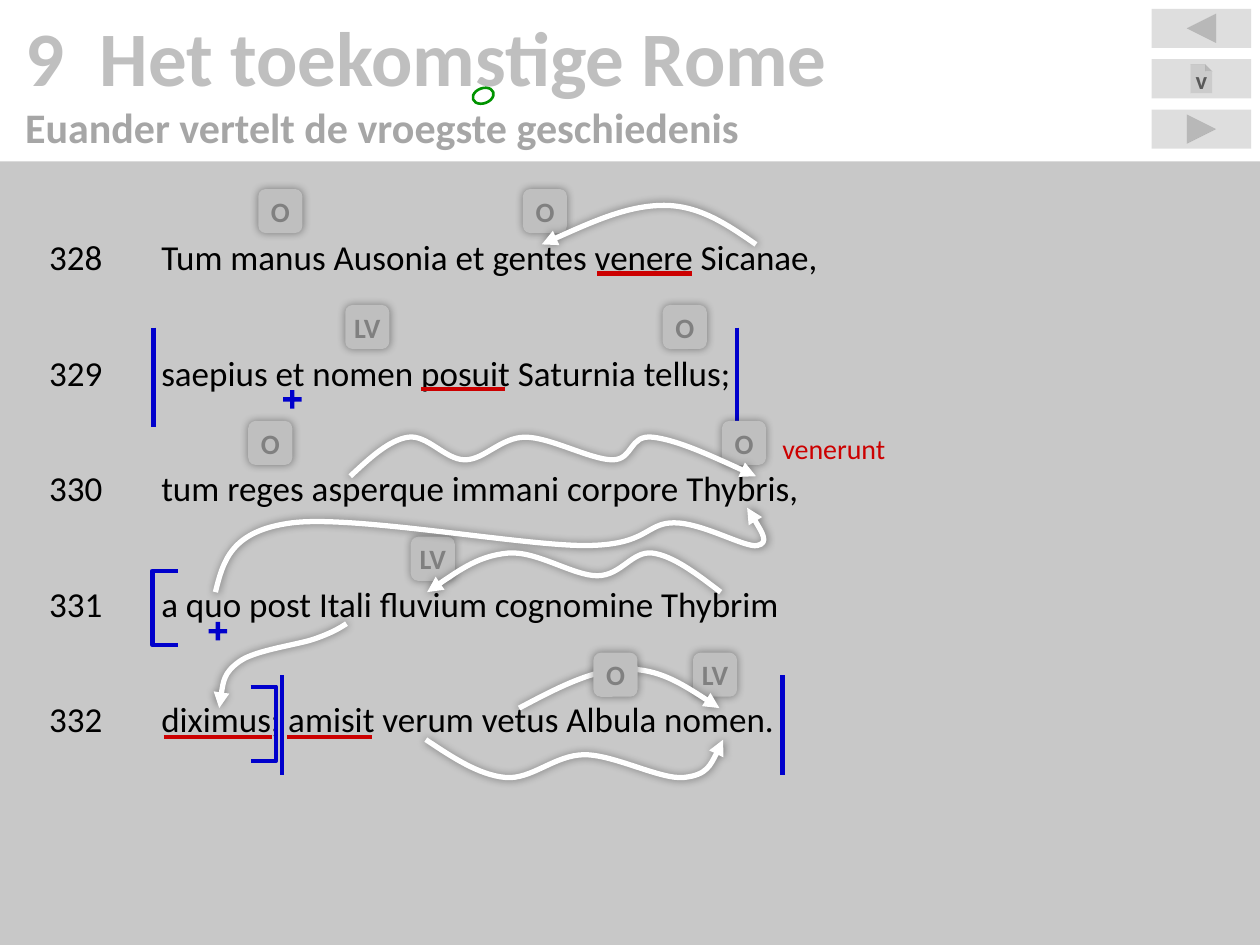
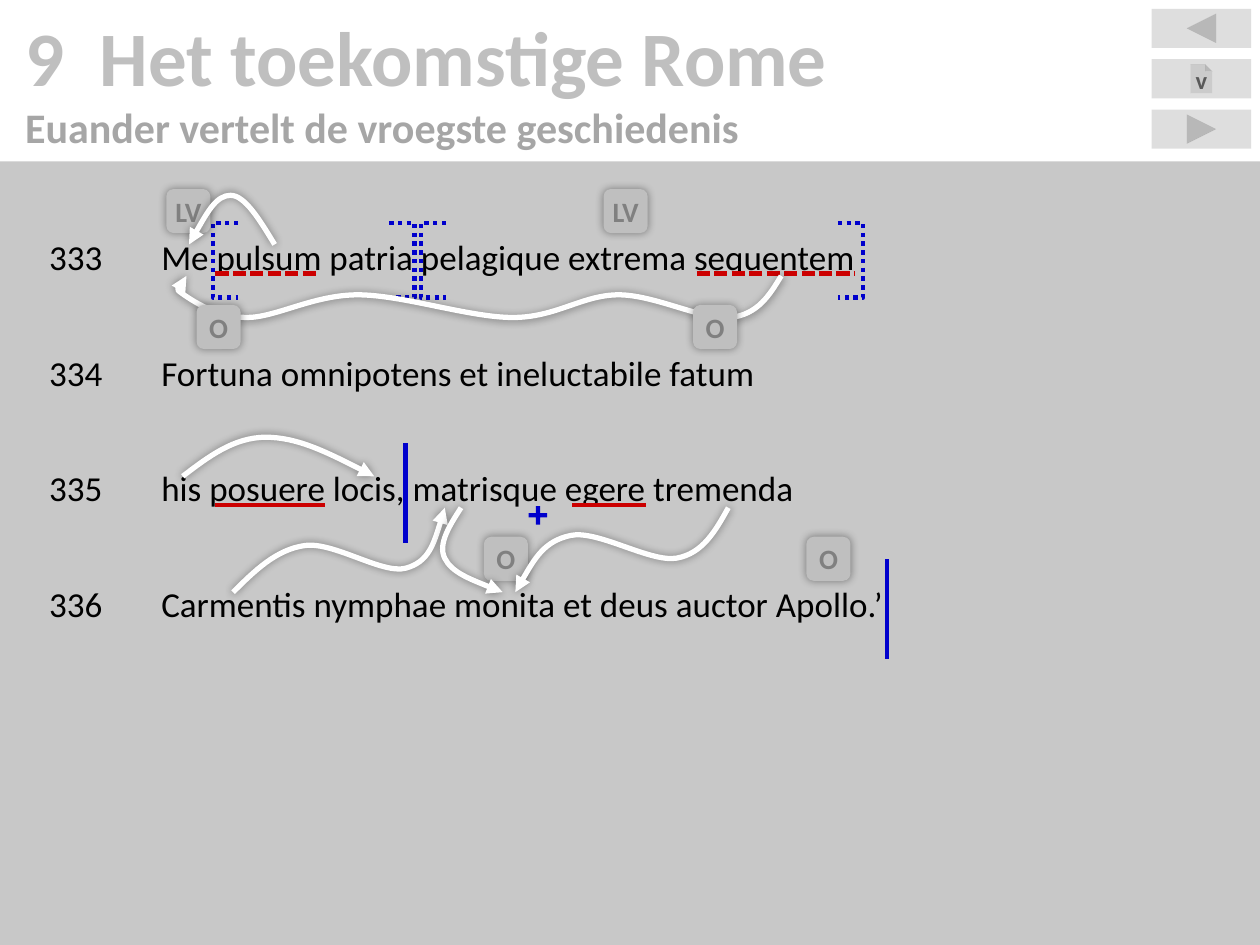
from dataclasses import dataclass
from typing import Any, NamedTuple

from lxml import etree
from pptx import Presentation
from pptx import util as u
from pptx.dml.color import RGBColor
from pptx.enum import dml, shapes, text
from pptx.oxml.ns import qn

Point = tuple[float, float]


@dataclass(frozen=True)
class Theme:
    font: str = "Calibri"
    panel: str = "BFBFBF"
    subtitle: str = "A6A6A6"
    badge_text: str = "808080"
    button_text: str = "595959"
    verse: str = "000000"
    clause: str = "0000CC"
    verb: str = "CC0000"
    arrow: str = "FFFFFF"
    ink: str = "009300"
    title_size: float = 44
    subtitle_size: float = 24
    verse_size: float = 20
    label_size: float = 16
    button_size: float = 14


THEME = Theme()
HEADER_HEIGHT = 1.28
PITCH = 0.92  # from one verse to the next

# Heights of the marks around the first verse
BADGE_TOP, BADGE = 1.5, 0.35
UNDERLINE_Y = 2.17
PLUS_TOP, PLUS = 2.15, 0.2
BAR_TOP, BAR_HEIGHT = 1.68, 0.79
BRACKET_TOP, BRACKET_WIDTH, BRACKET_HEIGHT = 1.77, 0.2, 0.59
OVER, UNDER = 1.94, 2.19
NEXT_OVER, PREVIOUS_UNDER = OVER + PITCH, UNDER - PITCH
CREST_OVER, CREST_UNDER, SWING = 1.63, 2.31, 0.18


class Badge(NamedTuple):
    label: str
    left: float
    in_front: bool = False


class Arrow(NamedTuple):
    """A wavy arrow through the given x stops; its bends alternate crest and trough."""
    stops: tuple[float, ...]
    leaves: float = OVER
    lands: float = OVER
    crest: float = CREST_OVER
    crest_first: bool = True


@dataclass
class Verse:
    words: str
    badges: tuple[Badge, ...] = ()
    underlines: tuple[Point, ...] = ()
    bars: tuple[float, ...] = ()
    opens: tuple[float, ...] = ()
    closes: tuple[float, ...] = ()
    pluses: tuple[float, ...] = ()
    arrows: tuple[Arrow, ...] = ()
    dashed: bool = False


FIRST_PAGE = [
    Verse("Tum manus Ausonia et gentes venere Sicanae,",
          badges=(Badge("O", 2.05), Badge("O", 4.15)), underlines=((4.74, 5.49),),
          arrows=(Arrow((6, 5.27, 4.3)),)),
    Verse("saepius et nomen posuit Saturnia tellus;",
          badges=(Badge("O", 5.26), Badge("LV", 2.74)), underlines=((3.34, 4.01),),
          bars=(1.22, 5.85), pluses=(2.22,)),
    Verse("tum reges asperque immani corpore Thybris,",
          badges=(Badge("O", 1.97), Badge("O", 5.73)),
          arrows=(Arrow((2.78, 3.24, 3.69, 4.17, 4.86, 5.18, 6)),
                  Arrow((1.71, 2.32, 4.64, 5.35, 6.01, 5.93), NEXT_OVER, UNDER, CREST_UNDER))),
    Verse("a quo post Itali fluvium cognomine Thybrim",
          badges=(Badge("LV", 3.26),), opens=(1.21,), pluses=(1.63,),
          arrows=(Arrow((5.72, 5.18, 4.74, 4.03, 3.39)),)),
    Verse("diximus; amisit verum vetus Albula nomen.",
          badges=(Badge("LV", 5.5), Badge("O", 4.71, in_front=True)),
          underlines=((1.3, 2.16), (2.28, 2.95)), bars=(2.24, 6.21), closes=(2.19,),
          arrows=(Arrow((2.75, 2.5, 1.9, 1.74), PREVIOUS_UNDER, OVER, CREST_UNDER - PITCH),
                  Arrow((3.38, 4.01, 4.64, 5.43, 5.74), UNDER, UNDER, CREST_UNDER, False),
                  Arrow((4.12, 4.97, 5.71)))),
]

SECOND_PAGE = [
    Verse("Me pulsum patria pelagique extrema sequentem", dashed=True,
          badges=(Badge("LV", 1.32), Badge("LV", 4.79)),
          underlines=((1.71, 2.54), (5.53, 6.78)), opens=(1.69, 3.34), closes=(3.29, 6.85),
          arrows=(Arrow((2.18, 1.83, 1.5), crest=CREST_OVER - 0.08),
                  Arrow((6.2, 5.8, 4.91, 4.07, 2.84, 1.96, 1.46, 1.48),
                        UNDER, UNDER, CREST_UNDER + 0.03, False))),
    Verse("Fortuna omnipotens et ineluctabile fatum",
          badges=(Badge("O", 1.56, in_front=True), Badge("O", 5.5, in_front=True))),
    Verse("his posuere locis, matrisque egere tremenda",
          underlines=((1.71, 2.58), (4.54, 5.13)), bars=(3.22,), pluses=(4.17,),
          arrows=(Arrow((1.45, 2.11, 2.97)),
                  Arrow((1.85, 2.42, 3.22, 3.53), NEXT_OVER, UNDER, CREST_UNDER + SWING))),
    Verse("Carmentis nymphae monita et deus auctor Apollo.’",
          badges=(Badge("O", 3.84), Badge("O", 6.4)), bars=(7.04,),
          arrows=(Arrow((5.78, 5.37, 4.53, 4.09), PREVIOUS_UNDER, OVER,
                        CREST_UNDER - PITCH + 0.1, False),
                  Arrow((3.66, 3.53, 3.99), PREVIOUS_UNDER, OVER,
                        CREST_UNDER - PITCH + 0.1, False))),
]


def add_xml(parent: Any, tag: str, **attributes: Any) -> Any:
    return etree.SubElement(parent, qn(tag), {k: str(v) for k, v in attributes.items()})


def set_frame(shape: Any, across: float, down: float, anchor: Any, wrap: bool = True) -> Any:
    settings = dict(margin_left=u.Inches(across), margin_right=u.Inches(across),
                    margin_top=u.Inches(down), margin_bottom=u.Inches(down),
                    vertical_anchor=anchor, word_wrap=wrap)
    for name, value in settings.items():
        setattr(shape.text_frame, name, value)
    return shape.text_frame


def write(paragraph: Any, words: str, size: float, color: str, bold: bool = False,
          align: Any = text.PP_ALIGN.LEFT, tab: float = 0) -> None:
    if tab:
        tabs = add_xml(paragraph._p.get_or_add_pPr(), "a:tabLst")
        add_xml(tabs, "a:tab", pos=u.Inches(tab), algn="l")
    paragraph.alignment = align
    run = paragraph.add_run()
    run.text = words
    for name, value in dict(name=THEME.font, size=u.Pt(size), bold=bold).items():
        setattr(run.font, name, value)
    run.font.color.rgb = RGBColor.from_string(color)


def style_line(line: Any, color: str, width: float, dash: Any = None) -> None:
    line.color.rgb = RGBColor.from_string(color)
    line.width = u.Pt(width)
    if dash is not None:
        line.dash_style = dash


def add_glow(shape: Any) -> None:
    """Give a shape a soft dark shadow on all sides."""
    effects = shape._element.spPr.find(qn("a:effectLst"))
    shadow = add_xml(effects, "a:outerShdw", blurRad=u.Pt(5), dist=0, dir=0,
                     algn="ctr", rotWithShape=0)
    add_xml(add_xml(shadow, "a:srgbClr", val=THEME.verse), "a:alpha", val=40000)


def add_block(slide: Any, kind: Any, left: float, top: float, width: float, height: float,
              color: str, opacity: int = 100) -> Any:
    block = slide.shapes.add_shape(kind, *map(u.Inches, (left, top, width, height)))
    block.shadow.inherit = False
    block.line.fill.background()
    block.fill.solid()
    block.fill.fore_color.rgb = RGBColor.from_string(color)
    if opacity < 100:
        tint = block._element.spPr.find(qn("a:solidFill"))[0]
        add_xml(tint, "a:alpha", val=opacity * 1000)
    return block


def add_straight(slide: Any, start: Point, end: Point, color: str, dash: Any = None) -> None:
    line = slide.shapes.add_connector(shapes.MSO_CONNECTOR.STRAIGHT,
                                      *map(u.Inches, start + end))
    style_line(line.line, color, 2.5, dash)
    add_xml(line._element.spPr, "a:effectLst")


def add_outline(slide: Any, points: list[Point], color: str, width: float,
                dash: Any = None) -> Any:
    corners = [(u.Inches(x), u.Inches(y)) for x, y in points]
    builder = slide.shapes.build_freeform(*corners[0], scale=1.0)
    outline = builder.add_line_segments(corners[1:], close=False).convert_to_shape()
    outline.shadow.inherit = False
    outline.fill.background()
    style_line(outline.line, color, width, dash)
    return outline


def smooth_controls(stops: list[Point]) -> list[Point]:
    """Return the start, then two handles and an end for each piece of a smooth curve."""
    slopes = [((c[0] - a[0]) / 6, (c[1] - a[1]) / 6) for a, c in zip(stops, stops[2:])]
    before = [(x - dx, y - dy) for (x, y), (dx, dy) in zip(stops[1:], slopes)]
    after = [(x + dx, y + dy) for (x, y), (dx, dy) in zip(stops[1:], slopes)]

    def middle(a: Point, b: Point) -> Point:
        return (a[0] + b[0]) / 2, (a[1] + b[1]) / 2

    leaving = [middle(stops[0], before[0])] + after
    arriving = before + [middle(stops[-1], after[-1])]
    pieces = zip(leaving, arriving, stops[1:])
    return [stops[0]] + [point for piece in pieces for point in piece]


def add_arrow(slide: Any, arrow: Arrow, shift: float) -> None:
    bends = [arrow.crest + SWING * ((i % 2 == 0) != arrow.crest_first)
             for i in range(len(arrow.stops) - 2)]
    heights = [arrow.leaves, *bends, arrow.lands]
    stops = [(x, y + shift) for x, y in zip(arrow.stops, heights)]
    curve = add_outline(slide, smooth_controls(stops), THEME.arrow, 3)
    track = next(curve._element.iter(qn("a:path")))
    segments = track.findall(qn("a:lnTo"))
    for first in range(0, len(segments), 3):
        bezier = add_xml(track, "a:cubicBezTo")
        for segment in segments[first:first + 3]:
            bezier.append(segment[0])
            track.remove(segment)
    add_xml(curve.line._get_or_add_ln(), "a:tailEnd", type="triangle")
    add_glow(curve)


def add_badge(slide: Any, badge: Badge, shift: float) -> None:
    box = add_block(slide, shapes.MSO_SHAPE.ROUNDED_RECTANGLE, badge.left, BADGE_TOP + shift,
                    BADGE, BADGE, THEME.panel)
    add_glow(box)
    frame = set_frame(box, 0, 0, text.MSO_ANCHOR.MIDDLE)
    write(frame.paragraphs[0], badge.label, THEME.label_size, THEME.badge_text, True,
          text.PP_ALIGN.CENTER)


def add_bracket(slide: Any, spine: float, reach: float, shift: float, dash: Any) -> None:
    top = BRACKET_TOP + shift
    bottom, tip = top + BRACKET_HEIGHT, spine + reach
    corners = [(tip, top), (spine, top), (spine, bottom), (tip, bottom)]
    add_outline(slide, corners, THEME.clause, 2.5, dash)


def add_clause_marks(slide: Any, verse: Verse, shift: float) -> None:
    verb_dash, clause_dash = ((dml.MSO_LINE.SQUARE_DOT, dml.MSO_LINE.ROUND_DOT)
                              if verse.dashed else (None, None))
    for left, right in verse.underlines:
        y = UNDERLINE_Y + shift
        add_straight(slide, (left, y), (right, y), THEME.verb, verb_dash)
    for x in verse.bars:
        top = BAR_TOP + shift
        add_straight(slide, (x, top), (x, top + BAR_HEIGHT), THEME.clause)
    for spines, reach in ((verse.opens, BRACKET_WIDTH), (verse.closes, -BRACKET_WIDTH)):
        for spine in spines:
            add_bracket(slide, spine, reach, shift, clause_dash)
    for left in verse.pluses:
        plus = add_block(slide, shapes.MSO_SHAPE.MATH_PLUS, left, PLUS_TOP + shift,
                         PLUS, PLUS, THEME.clause)
        plus.adjustments[0] = 0.17


def add_header(slide: Any) -> None:
    header = slide.shapes.add_textbox(0, 0, u.Inches(10), u.Inches(HEADER_HEIGHT))
    frame = set_frame(header, 0.2, 0.2, text.MSO_ANCHOR.MIDDLE)
    write(frame.paragraphs[0], "9\tHet toekomstige Rome", THEME.title_size, THEME.panel,
          True, tab=0.59)
    write(frame.add_paragraph(), "Euander vertelt de vroegste geschiedenis",
          THEME.subtitle_size, THEME.subtitle, True)


def add_verses(slide: Any, verses: list[Verse], first_number: int) -> None:
    panel = add_block(slide, shapes.MSO_SHAPE.RECTANGLE, 0, HEADER_HEIGHT, 10,
                      7.5 - HEADER_HEIGHT, THEME.panel, 85)
    frame = set_frame(panel, 0.39, 0.59, text.MSO_ANCHOR.TOP)
    for row, verse in enumerate(verses):
        paragraph = frame.add_paragraph() if row else frame.paragraphs[0]
        write(paragraph, f"{first_number + row}\t{verse.words}", THEME.verse_size,
              THEME.verse, tab=0.89)
        paragraph.space_after = u.Pt(42)


def add_navigation(slide: Any) -> None:
    kinds = shapes.MSO_SHAPE
    buttons = [(kinds.ACTION_BUTTON_BACK_OR_PREVIOUS, ""), (kinds.ACTION_BUTTON_DOCUMENT, "v"),
               (kinds.ACTION_BUTTON_FORWARD_OR_NEXT, "")]
    for row, (kind, label) in enumerate(buttons):
        button = add_block(slide, kind, 9.14, 0.07 + 0.4 * row, 0.79, 0.31, THEME.panel, 50)
        if label:
            frame = set_frame(button, 0.1, 0.05, text.MSO_ANCHOR.TOP)
            write(frame.paragraphs[0], label, THEME.button_size, THEME.button_text, True,
                  text.PP_ALIGN.CENTER)


def add_page(deck: Any, verses: list[Verse], first_number: int) -> Any:
    slide = deck.slides.add_slide(deck.slide_layouts[6])
    add_header(slide)
    add_verses(slide, verses, first_number)
    add_navigation(slide)
    rows = [(verse, PITCH * row) for row, verse in enumerate(verses)]
    badges = [(badge, shift) for verse, shift in rows for badge in verse.badges]
    for verse, shift in rows:
        add_clause_marks(slide, verse, shift)
    for badge, shift in badges:
        if not badge.in_front:
            add_badge(slide, badge, shift)
    for verse, shift in rows:
        for arrow in verse.arrows:
            add_arrow(slide, arrow, shift)
    for badge, shift in badges:
        if badge.in_front:
            add_badge(slide, badge, shift)
    return slide


def add_verb_note(slide: Any) -> None:
    note = slide.shapes.add_textbox(*map(u.Inches, (6.21, 3.38, 0.83, 0.37)))
    frame = set_frame(note, 0, 0.05, text.MSO_ANCHOR.TOP, wrap=False)
    write(frame.paragraphs[0], "venerunt", THEME.label_size, THEME.verb)


def add_ink_ring(slide: Any) -> None:
    ring = add_block(slide, shapes.MSO_SHAPE.OVAL, 3.75, 0.7, 0.17, 0.12, THEME.ink)
    ring.fill.background()
    ring.rotation = -20
    style_line(ring.line, THEME.ink, 1.5)


def main() -> None:
    deck = Presentation()
    deck.slide_width, deck.slide_height = u.Inches(10), u.Inches(7.5)
    opening = add_page(deck, FIRST_PAGE, 328)
    add_verb_note(opening)
    add_ink_ring(opening)
    add_page(deck, SECOND_PAGE, 333)
    deck.save("out.pptx")


if __name__ == "__main__":
    main()
